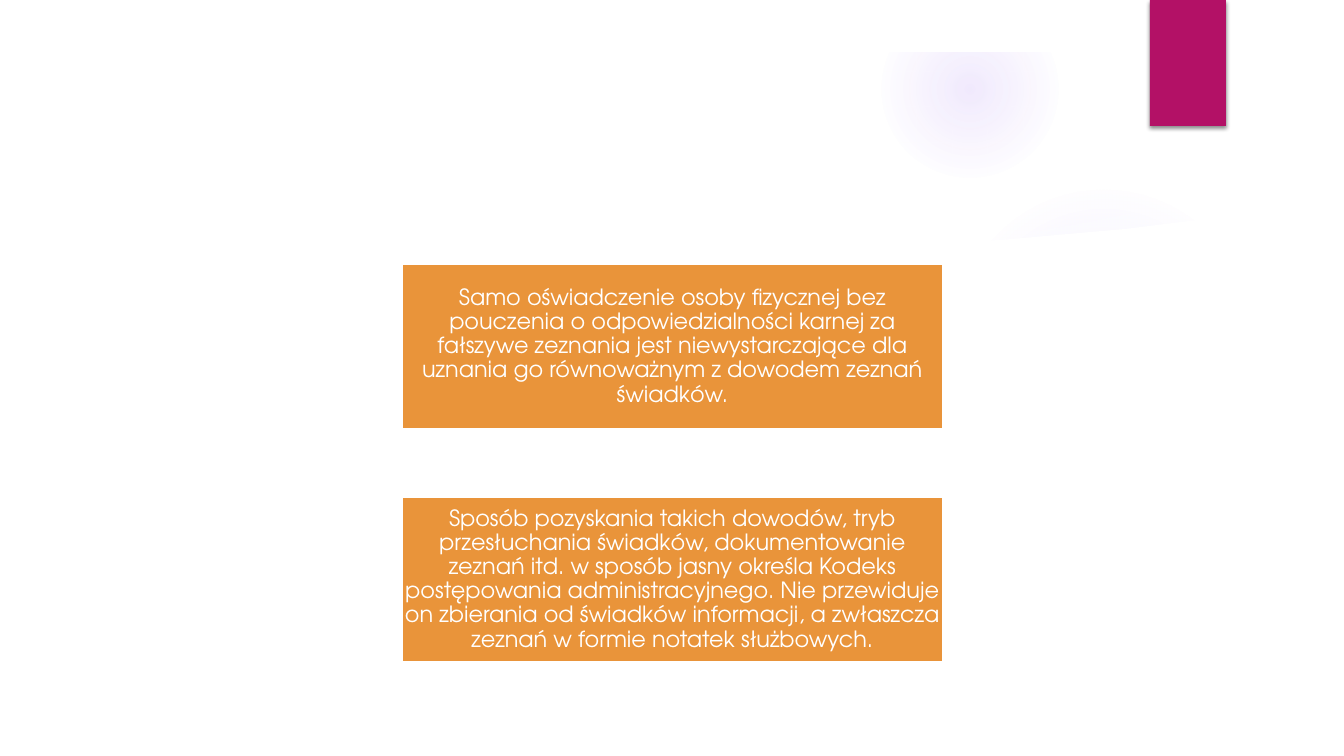
from dataclasses import dataclass

from lxml.etree import SubElement
from pptx import Presentation
from pptx.dml.color import RGBColor
from pptx.enum.shapes import MSO_SHAPE
from pptx.enum.text import MSO_ANCHOR, PP_ALIGN
from pptx.oxml import parse_xml
from pptx.oxml.ns import nsdecls, qn
from pptx.util import Pt

SLIDE_W, SLIDE_H = 1344, 756
SCALE = 12192000 / SLIDE_W


@dataclass(frozen=True)
class Theme:
    white: str = "FFFFFF"
    glow: str = "9B6BF2"
    tag: str = "B31166"
    card: str = "E9943A"
    shadow: str = "000000"
    font: str = "TeX Gyre Adventor"
    body: int = 16
    border: float = 1.5


THEME = Theme()

WAVE = [(50, 706), (1294, 706), (1294, 206), (1238, 215), (1181, 222), (1125, 229),
        (1068, 234), (1012, 239), (957, 243), (874, 247), (766, 249), (662, 250),
        (563, 248), (448, 243), (324, 235), (218, 226), (136, 217), (50, 206)]
VEIL = [(941, 252), (1010, 249), (1111, 240), (1215, 229), (1299, 216), (1293, 167),
        (1258, 179), (1223, 190), (1187, 200), (1153, 208), (1118, 216), (1084, 223),
        (1050, 229), (1018, 234), (987, 239), (937, 245)]
SLIDE_EDGE = [(0, 0), (0, SLIDE_H), (SLIDE_W, SLIDE_H), (SLIDE_W, 0)]
FRAME_HOLE = [(52, 52), (1291, 52), (1291, 704), (52, 704)]

CARD_X, CARD_Y, CARD_W, CARD_H, CARD_STEP = 402, 264, 541, 165, 233
CARDS = [
    "Samo oświadczenie osoby fizycznej bez pouczenia o odpowiedzialności karnej "
    "za fałszywe zeznania jest niewystarczające dla uznania go równoważnym "
    "z dowodem zeznań świadków.",
    "Sposób pozyskania takich dowodów, tryb przesłuchania świadków, dokumentowanie "
    "zeznań itd. w sposób jasny określa Kodeks postępowania administracyjnego. "
    "Nie przewiduje on zbierania od świadków informacji, a zwłaszcza zeznań "
    "w formie notatek służbowych.",
]


def px(n):
    return round(n * SCALE)


def paint(sp, color):
    sp.shadow.inherit = False
    sp.fill.solid()
    sp.fill.fore_color.rgb = RGBColor.from_string(color)
    sp.line.fill.background()


def add_block(s, kind, x, y, w, h, color):
    sp = s.shapes.add_shape(kind, px(x), px(y), px(w), px(h))
    paint(sp, color)
    return sp


def add_glow(s, x, y, size, stops):
    """Draw a circle fading outwards; stops are (position %, opacity %)."""
    sp = add_block(s, MSO_SHAPE.OVAL, x, y, size, size, THEME.glow)
    marks = "".join(
        f'<a:gs pos="{pos * 1000}"><a:srgbClr val="{THEME.glow}">'
        f'<a:alpha val="{alpha * 1000}"/></a:srgbClr></a:gs>'
        for pos, alpha in stops)
    gradient = parse_xml(
        f'<a:gradFill {nsdecls("a")} rotWithShape="1"><a:gsLst>{marks}</a:gsLst>'
        '<a:path path="circle"><a:fillToRect l="50000" t="50000" r="50000" b="50000"/>'
        '</a:path></a:gradFill>')
    spPr = sp.element.spPr
    spPr.replace(spPr.find(qn("a:solidFill")), gradient)


def add_outline(s, *contours):
    """Draw a white area bounded by one or more closed contours."""
    first, *others = contours
    builder = s.shapes.build_freeform(*first[0], scale=SCALE)
    builder.add_line_segments(first[1:], close=True)
    for points in others:
        builder.move_to(*points[0])
        builder.add_line_segments(points[1:], close=True)
    sp = builder.convert_to_shape()
    paint(sp, THEME.white)
    return sp


def set_opacity(sp, percent):
    color = sp.element.spPr.find(qn("a:solidFill"))[0]
    SubElement(color, qn("a:alpha"), val=str(percent * 1000))


def add_tag(s):
    sp = add_block(s, MSO_SHAPE.RECTANGLE, 1150, 0, 76, 126, THEME.tag)
    effects = sp.element.spPr.find(qn("a:effectLst"))
    effects.append(parse_xml(
        f'<a:outerShdw {nsdecls("a")} blurRad="{Pt(3)}" dist="{Pt(2)}" dir="5400000" '
        f'rotWithShape="0"><a:srgbClr val="{THEME.shadow}"><a:alpha val="45000"/>'
        '</a:srgbClr></a:outerShdw>'))


def add_card(s, y, text):
    sp = add_block(s, MSO_SHAPE.RECTANGLE, CARD_X, y, CARD_W, CARD_H, THEME.card)
    sp.line.color.rgb = RGBColor.from_string(THEME.white)
    sp.line.width = Pt(THEME.border)
    tf = sp.text_frame
    tf.word_wrap = True
    tf.vertical_anchor = MSO_ANCHOR.MIDDLE
    tf.margin_left = tf.margin_right = tf.margin_top = tf.margin_bottom = px(1)
    p = tf.paragraphs[0]
    p.alignment = PP_ALIGN.CENTER
    p.line_spacing = 0.9
    r = p.add_run()
    r.text = text
    r.font.name = THEME.font
    r.font.size = Pt(THEME.body)
    r.font.color.rgb = RGBColor.from_string(THEME.white)


def main():
    prs = Presentation()
    prs.slide_width, prs.slide_height = px(SLIDE_W), px(SLIDE_H)
    s = prs.slides.add_slide(prs.slide_layouts[6])

    add_glow(s, 949, 184, 310, [(0, 7), (36, 6), (69, 0)])
    add_glow(s, 882, 1, 176, [(0, 14), (36, 7), (73, 0)])
    set_opacity(add_outline(s, VEIL), 20)
    add_outline(s, WAVE)
    add_outline(s, SLIDE_EDGE, FRAME_HOLE)
    add_tag(s)
    for i, text in enumerate(CARDS):
        add_card(s, CARD_Y + i * CARD_STEP, text)

    prs.save("out.pptx")


if __name__ == "__main__":
    main()
